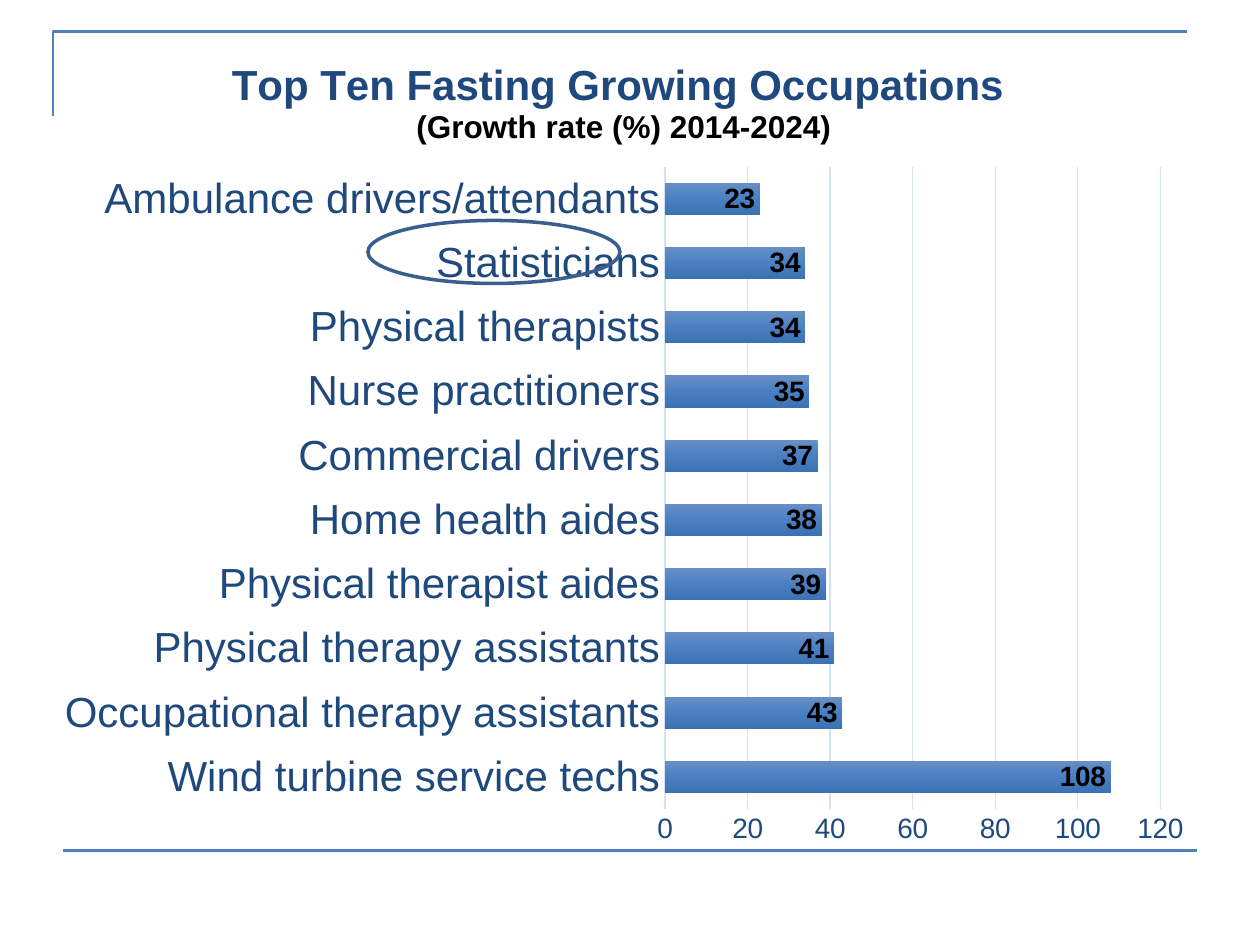
from copy import deepcopy

from lxml import etree
from pptx import Presentation
from pptx.chart.data import CategoryChartData
from pptx.dml.color import RGBColor
from pptx.enum import chart as ch, shapes
from pptx.oxml import parse_xml
from pptx.oxml.ns import nsdecls, qn
from pptx.util import Inches, Pt

# Content
HEADING = [("Top Ten Fasting Growing Occupations ", 24, "1F497D"),
           ("(Growth rate (%) 2014-2024)", 18, "000000")]
OCCUPATIONS = [
    ("Wind turbine service techs", 108),
    ("Occupational therapy assistants", 43),
    ("Physical therapy assistants", 41),
    ("Physical therapist aides", 39),
    ("Home health aides", 38),
    ("Commercial drivers", 37),
    ("Nurse practitioners", 35),
    ("Physical therapists", 34),
    ("Statisticians", 34),
    ("Ambulance drivers/attendants", 23),
]
NAVY, RULE, GRID = "1F497D", "4F81BD", "D4E3F4"
BAR_GRADIENT = [(0, "688FC5"), (0.5, "4A80C3"), (1, "3B72B3")]


def rgb(color):
    return RGBColor.from_string(color)


def style_font(font, size, color, bold=False):
    font.name, font.size, font.bold = "Arial", Pt(size), bold
    font.color.rgb = rgb(color)


def style_line(line, color, width):
    line.color.rgb = rgb(color)
    line.width = Pt(width)


def set_layout(parent, **fractions):
    """Place a chart part by fractions of the chart frame."""
    for old in parent.findall(qn("c:layout")):
        parent.remove(old)
    inner = '<c:layoutTarget val="inner"/>' if "w" in fractions else ""
    modes = "".join(f'<c:{key}Mode val="edge"/>' for key in fractions if key in "xy")
    values = "".join(f'<c:{key} val="{value}"/>' for key, value in fractions.items())
    layout = parse_xml(f'<c:layout {nsdecls("c")}><c:manualLayout>{inner}{modes}{values}'
                       '</c:manualLayout></c:layout>')
    text = parent.find(qn("c:tx"))
    parent.insert(0 if text is None else 1, layout)


prs = Presentation()
prs.slide_width, prs.slide_height = Inches(10), Inches(7.5)
slide = prs.slides.add_slide(prs.slide_layouts[6])

# Corner rule at the top, straight rule at the bottom
builder = slide.shapes.build_freeform(Inches(0.42), Inches(0.92))
builder.add_line_segments([(Inches(0.42), Inches(0.25)), (Inches(9.42), Inches(0.25))],
                          close=False)
corner = builder.convert_to_shape()
corner.shadow.inherit = False
corner.fill.background()
style_line(corner.line, RULE, 1.5)

bottom_rule = slide.shapes.add_connector(shapes.MSO_CONNECTOR.STRAIGHT, Inches(0.5),
                                         Inches(6.75), Inches(9.5), Inches(6.75))
style_line(bottom_rule.line, RULE, 1.5)
etree.SubElement(bottom_rule._element.spPr, qn("a:effectLst"))

# Bar chart of growth rates
data = CategoryChartData()
data.categories = [name for name, _ in OCCUPATIONS]
data.add_series("Series 1", [rate for _, rate in OCCUPATIONS])
growth = slide.shapes.add_chart(ch.XL_CHART_TYPE.BAR_CLUSTERED, Inches(0.33), Inches(0.25),
                                Inches(9.25), Inches(6.58), data).chart
style_font(growth.font, 10, "000000")
growth.has_legend = False
set_layout(growth._chartSpace.chart.plotArea, x=0.535, y=0.163, w=0.425, h=0.775)

# Chart heading
heading = growth.chart_title.text_frame
for index, (words, size, color) in enumerate(HEADING):
    line = heading.add_paragraph() if index else heading.paragraphs[0]
    run = line.add_run()
    run.text = words
    style_font(run.font, size, color, bold=True)
growth.chart_title.include_in_layout = False
set_layout(growth.chart_title._element, x=0.16, y=0.03)

# Axes
occupation_axis, rate_axis = growth.category_axis, growth.value_axis
for axis, size in ((occupation_axis, 24), (rate_axis, 16)):
    style_font(axis.tick_labels.font, size, NAVY)
    axis.major_tick_mark = axis.minor_tick_mark = ch.XL_TICK_MARK.NONE
style_line(occupation_axis.format.line, GRID, 0.75)
rate_axis.format.line.fill.background()
rate_axis.minimum_scale, rate_axis.maximum_scale, rate_axis.major_unit = 0, 120, 20
rate_axis.has_major_gridlines = True
style_line(rate_axis.major_gridlines.format.line, GRID, 0.75)

# Bars and their values
plot = growth.plots[0]
plot.gap_width = 100
plot.vary_by_categories = False
rates = plot.series[0]
fill = rates.format.fill
fill.gradient()
fill.gradient_angle = 270
stop_list = rates._element.find(".//" + qn("a:gsLst"))
stop_list.append(deepcopy(stop_list[-1]))
for stop, (position, color) in zip(fill.gradient_stops, BAR_GRADIENT):
    stop.position = position
    stop.color.rgb = rgb(color)
labels = rates.data_labels
labels.show_value = True
labels.position = ch.XL_LABEL_POSITION.INSIDE_END
style_font(labels.font, 16, "000000", bold=True)

# Ring around the statisticians
ring = slide.shapes.add_shape(shapes.MSO_SHAPE.OVAL, Inches(2.92), Inches(1.75),
                              Inches(2), Inches(0.5))
ring.shadow.inherit = False
ring.fill.background()
style_line(ring.line, "3A5F8C", 2)

prs.save("out.pptx")
